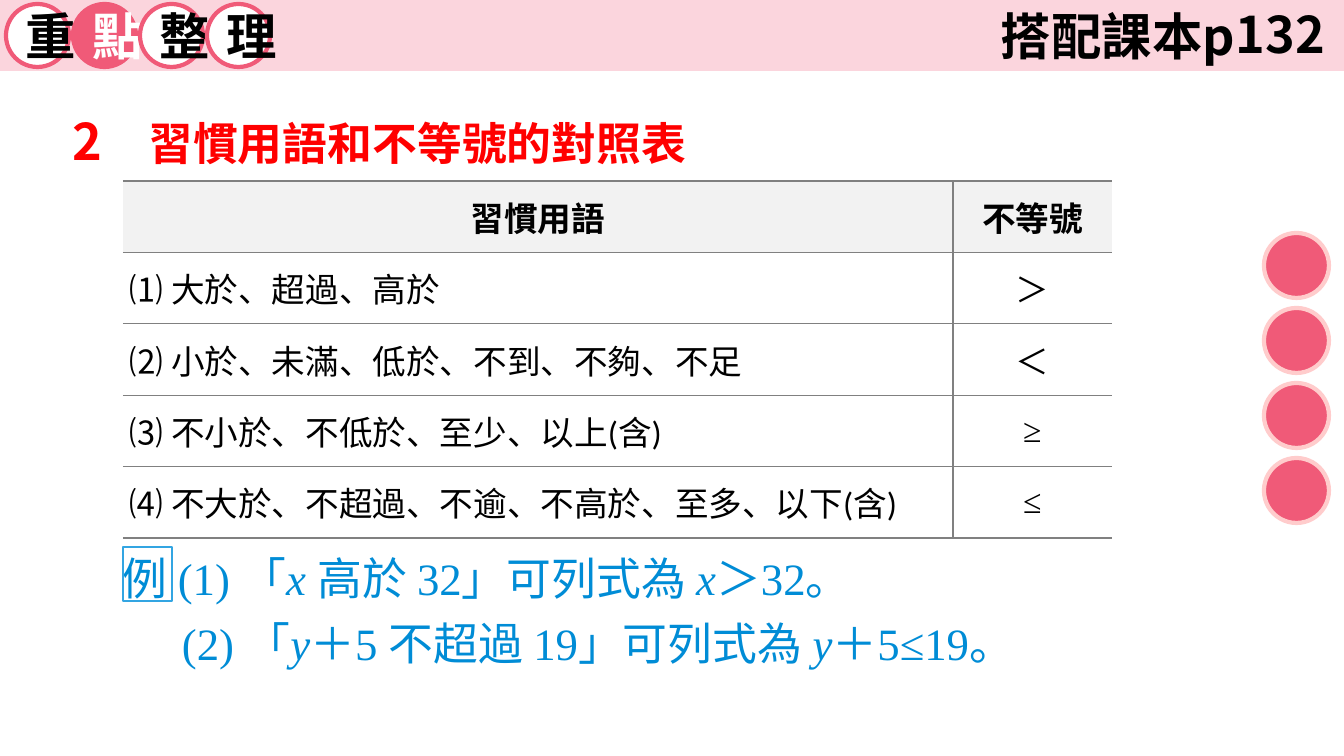
from lxml import etree
from pptx import Presentation
from pptx.dml.color import RGBColor
from pptx.enum.shapes import MSO_SHAPE as Shape
from pptx.enum.text import MSO_ANCHOR as Anchor, PP_ALIGN as Align
from pptx.oxml.ns import qn
from pptx.util import Pt

BLACK = RGBColor(0, 0, 0)
WHITE = RGBColor(255, 255, 255)
RED = RGBColor(255, 0, 0)
PINK = RGBColor(0xF0, 0x5A, 0x78)
PALE_PINK = RGBColor(0xFF, 0xCC, 0xCC)
BLUE = RGBColor(0x00, 0x8C, 0xD6)
LIGHT_BLUE = RGBColor(0x33, 0xA5, 0xE2)
HEADER_GREY = RGBColor(0xF2, 0xF2, 0xF2)
RULE_GREY = "808080"
SANS, SERIF, TABLE_FONT = "Noto Sans CJK SC", "Times New Roman", "Calibri"
NO_STYLE = "{2D5ABB26-0587-4C30-8999-92F81FD0307C}"

BADGES = [("重", WHITE, BLACK), ("點", PINK, WHITE), ("整", WHITE, BLACK), ("理", WHITE, BLACK)]
BUTTON_COUNT = 4
PAGE_LABEL, PAGE_NUMBER = "搭配課本p", "132"
HEADING_NUMBER, HEADING = "2\t", "習慣用語和不等號的對照表"
TABLE_ROWS = [
    ("習慣用語", "不等號"),
    ("⑴ 大於、超過、高於", "＞"),
    ("⑵ 小於、未滿、低於、不到、不夠、不足", "＜"),
    ("⑶ 不小於、不低於、至少、以上(含)", "≥"),
    ("⑷ 不大於、不超過、不逾、不高於、至多、以下(含)", "≤"),
]
# Each example is a list of (text, italic).
EXAMPLES = [
    [("例 (1) 「", False), ("x ", True), ("高於 32」可列式為 ", False),
     ("x", True), ("＞32。", False)],
    [("(2) 「", False), ("y", True), ("＋5 不超過 19」可列式為 ", False),
     ("y", True), ("＋5", False), ("≤", True), ("19。", False)],
]


def px(length):
    return round(length * 914400 / 100.8)


def rect(*lengths):
    return [px(length) for length in lengths]


def add_span(para, text, east_asian=SANS, **formats):
    span = para.add_run()
    span.text = text
    color = formats.pop("color")
    for name, value in formats.items():
        setattr(span.font, name, value)
    span.font.color.rgb = color
    east = etree.SubElement(span.font._element, qn("a:ea"))
    east.set("typeface", east_asian)


def add_figure(page, kind, place, fill=None, line=None, weight=1):
    figure = page.shapes.add_shape(kind, *rect(*place))
    figure.shadow.inherit = False
    if fill is None:
        figure.fill.background()
    else:
        figure.fill.solid()
        figure.fill.fore_color.rgb = fill
    if line is None:
        figure.line.fill.background()
    else:
        figure.line.color.rgb = line
        figure.line.width = Pt(weight)
    return figure


def add_text(page, *place):
    frame = page.shapes.add_textbox(*rect(*place)).text_frame
    frame.word_wrap = True
    return frame


def set_borders(cell, sides):
    properties = cell._tc.get_or_add_tcPr()
    for index, side in enumerate(sides):
        line = etree.Element(qn("a:" + side), w=str(Pt(1)))
        fill = etree.SubElement(line, qn("a:solidFill"))
        etree.SubElement(fill, qn("a:srgbClr"), val=RULE_GREY)
        properties.insert(index, line)


def add_buttons(page):
    for index in range(BUTTON_COUNT):
        add_figure(page, Shape.OVAL, (1264, 233 + 75 * index, 65, 65), PINK, PALE_PINK, 3)


def add_banner(page):
    band = add_figure(page, Shape.RECTANGLE, (0, 0, 1344, 71), PINK)
    tint = band._element.spPr.find(qn("a:solidFill"))[0]
    etree.SubElement(tint, qn("a:alpha"), val="25000")
    title = dict(size=Pt(36), bold=True, name=SANS)
    for index, (letter, fill, color) in enumerate(BADGES):
        badge = add_figure(page, Shape.ROUNDED_RECTANGLE, (6 + 67 * index, 4, 63, 63),
                           fill, PINK, 3)
        badge.adjustments[0] = 0.5
        badge.text_frame.vertical_anchor = Anchor.MIDDLE
        para = badge.text_frame.paragraphs[0]
        para.alignment = Align.CENTER
        add_span(para, letter, color=color, **title)
    label = add_text(page, 991, 0, 353, 71).paragraphs[0]
    add_span(label, PAGE_LABEL, color=BLACK, **title)
    number = add_text(page, 1226, 5, 233, 65).paragraphs[0]
    number.line_spacing = 0.9
    add_span(number, PAGE_NUMBER, color=BLACK, **title)


def add_heading(page):
    para = add_text(page, 63, 99, 1163, 75).paragraphs[0]
    para.line_spacing = 1.1
    para.space_after = Pt(6)
    properties = para._p.get_or_add_pPr()
    properties.set("marL", str(px(25)))
    properties.set("indent", str(px(-25)))
    tabs = etree.SubElement(properties, qn("a:tabLst"))
    etree.SubElement(tabs, qn("a:tab"), pos=str(px(49)), algn="l")
    add_span(para, HEADING_NUMBER, size=Pt(36), bold=True, name=SANS, color=RED)
    add_span(para, HEADING, size=Pt(32), bold=True, name=SERIF, color=RED)


def add_examples(page):
    frame = add_text(page, 113, 535, 974, 165)
    for index, spans in enumerate(EXAMPLES):
        para = frame.add_paragraph() if index else frame.paragraphs[0]
        para.line_spacing = 1.2
        if index:
            properties = para._p.get_or_add_pPr()
            properties.set("marL", str(px(59)))
            properties.set("indent", "0")
        for text, italic in spans:
            add_span(para, text, size=Pt(32), italic=italic, name=SERIF, color=BLUE)
    add_figure(page, Shape.RECTANGLE, (123, 547, 49, 54), line=LIGHT_BLUE)


def add_phrase_table(page):
    holder = page.shapes.add_table(len(TABLE_ROWS), 2, *rect(123, 181, 989, 357))
    table = holder.table
    table._tbl.tblPr.find(qn("a:tableStyleId")).text = NO_STYLE
    table.horz_banding = False
    table.columns[0].width, table.columns[1].width = rect(830, 159)
    for row, texts in enumerate(TABLE_ROWS):
        for column, text in enumerate(texts):
            cell = table.cell(row, column)
            cell.margin_left = cell.margin_right = px(7)
            cell.margin_top = cell.margin_bottom = 0
            cell.vertical_anchor = Anchor.MIDDLE
            if row == 0:
                cell.fill.solid()
                cell.fill.fore_color.rgb = HEADER_GREY
            else:
                cell.fill.background()
            set_borders(cell, ["lnL", "lnT", "lnB"] if column else ["lnT", "lnB"])
            para = cell.text_frame.paragraphs[0]
            para.alignment = Align.CENTER if row == 0 or column else Align.JUSTIFY
            font = SERIF if text in "≥≤" else TABLE_FONT
            add_span(para, text, size=Pt(24), bold=row == 0, name=font, color=BLACK)


def main():
    deck = Presentation()
    deck.slide_width, deck.slide_height = rect(1344, 756)
    page = deck.slides.add_slide(deck.slide_layouts[6])
    add_buttons(page)
    add_banner(page)
    add_heading(page)
    add_examples(page)
    add_phrase_table(page)
    deck.save("out.pptx")


if __name__ == "__main__":
    main()
